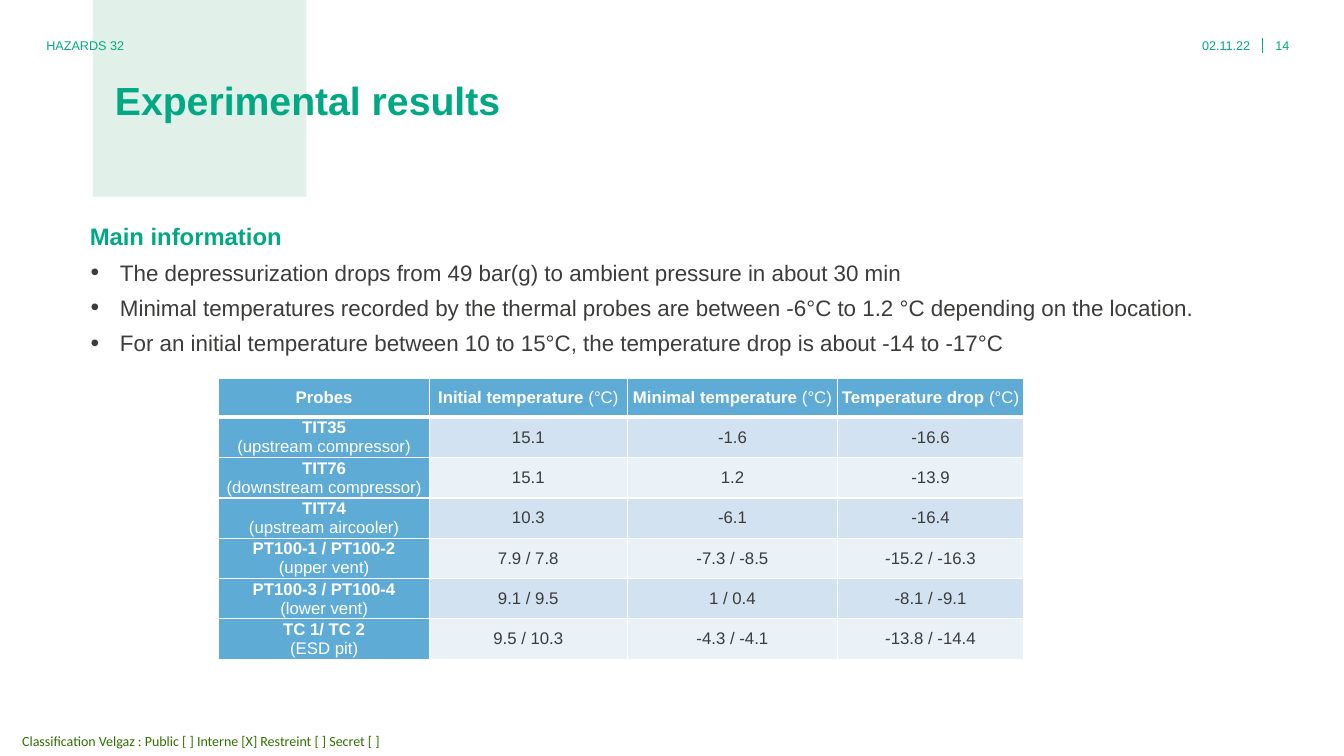
from lxml.etree import SubElement
from pptx import Presentation
from pptx.dml.color import RGBColor
from pptx.enum.shapes import MSO_CONNECTOR, MSO_SHAPE
from pptx.enum.text import MSO_ANCHOR, MSO_AUTO_SIZE, PP_ALIGN
from pptx.oxml.ns import qn
from pptx.util import Inches, Pt

GREEN = RGBColor(0x00, 0xA9, 0x83)
DARK_GREEN = RGBColor(0x31, 0x71, 0x00)
PALE_GREEN = RGBColor(0xE1, 0xF0, 0xE8)
TEXT = RGBColor(0x3C, 0x3C, 0x3B)
WHITE = RGBColor(0xFF, 0xFF, 0xFF)
BLUE = RGBColor(0x5E, 0xAB, 0xD6)
BANDS = [RGBColor(0xD2, 0xE2, 0xF0), RGBColor(0xEA, 0xF1, 0xF7)]

TITLE = "Experimental results"
HEADING = "Main information"
BULLETS = [
    "The depressurization drops from 49 bar(g) to ambient pressure in about 30 min",
    "Minimal temperatures recorded by the thermal probes are between -6°C to 1.2 °C "
    "depending on the location.",
    "For an initial temperature between 10 to 15°C, the temperature drop is about -14 to -17°C",
]
# text, (left, top, width, height), left inset, size, font, colour, alignment
LABELS = [
    ("Classification Velgaz : Public [ ] Interne [X] Restreint [ ] Secret [ ]",
     (0, 7.21, 4.03, 0.29), 0.22, 10, "Calibri", DARK_GREEN, PP_ALIGN.LEFT),
    ("02.11.22", (11.41, 0.33, 0.99, 0.24), 0, 9, "Arial", GREEN, PP_ALIGN.RIGHT),
    ("HAZARDS 32", (0.46, 0.33, 6.21, 0.24), 0, 9, "Arial", GREEN, PP_ALIGN.LEFT),
    ("14", (12.65, 0.33, 0.5, 0.24), 0, 9, "Arial", GREEN, PP_ALIGN.LEFT),
]
COLUMNS = [("Probes", 2.09), ("Initial temperature", 1.96),
           ("Minimal temperature", 2.09), ("Temperature drop", 1.84)]
UNIT = " (°C)"
PROBES = [
    ("TIT35", "(upstream compressor)", "15.1", "-1.6", "-16.6"),
    ("TIT76", "(downstream compressor)", "15.1", "1.2", "-13.9"),
    ("TIT74", "(upstream aircooler)", "10.3", "-6.1", "-16.4"),
    ("PT100-1 / PT100-2", "(upper vent)", "7.9 / 7.8", "-7.3 / -8.5", "-15.2 / -16.3"),
    ("PT100-3 / PT100-4", "(lower vent)", "9.1 / 9.5", "1 / 0.4", "-8.1 / -9.1"),
    ("TC 1/ TC 2", "(ESD pit)", "9.5 / 10.3", "-4.3 / -4.1", "-13.8 / -14.4"),
]
TABLE_LEFT, TABLE_TOP, HEADER_H, ROW_H = 2.17, 3.75, 0.39, 0.4


def style(font, size, color, bold=False, name="Arial"):
    font.name, font.size, font.bold = name, Pt(size), bold
    font.color.rgb = color


def set_frame(sp, box, anchor, left_inset=0):
    sp.left, sp.top, sp.width, sp.height = map(Inches, box)
    tf = sp.text_frame
    tf.word_wrap, tf.auto_size, tf.vertical_anchor = True, MSO_AUTO_SIZE.NONE, anchor
    tf.margin_left = Inches(left_inset)
    tf.margin_top = tf.margin_right = tf.margin_bottom = 0
    return tf


def set_bullet(p, char=None):
    """Give the paragraph a hanging bullet, or none at all."""
    pPr = p._p.get_or_add_pPr()
    pPr.set("marL", str(Inches(0.3) if char else 0))
    pPr.set("indent", str(Inches(-0.29) if char else 0))
    if char:
        SubElement(pPr, qn("a:buSzPct"), val="110000")
        SubElement(pPr, qn("a:buChar"), char=char)
    else:
        SubElement(pPr, qn("a:buNone"))


def set_cell(cell, fill, parts, top=1, bottom=1):
    """Fill, border and write a cell; parts are (text, bold, colour), "\\n" breaks the line."""
    tcPr = cell._tc.get_or_add_tcPr()
    for side, width in (("L", 1), ("R", 1), ("T", top), ("B", bottom)):
        ln = SubElement(tcPr, qn(f"a:ln{side}"), w=str(Pt(width)))
        solid = SubElement(ln, qn("a:solidFill"))
        SubElement(solid, qn("a:srgbClr"), val=str(WHITE))
    cell.fill.solid()
    cell.fill.fore_color.rgb = fill
    cell.vertical_anchor = MSO_ANCHOR.MIDDLE
    cell.margin_left = cell.margin_right = Inches(0.04)
    cell.margin_top = cell.margin_bottom = 0
    p = cell.text_frame.paragraphs[0]
    p.alignment = PP_ALIGN.CENTER
    for text, bold, color in parts:
        if text.startswith("\n"):
            p.add_line_break()
        r = p.add_run()
        r.text = text.lstrip("\n")
        style(r.font, 12, color, bold)


def add_backdrop(slide):
    sp = slide.shapes.add_shape(MSO_SHAPE.RECTANGLE, Inches(0.92), 0, Inches(2.12), Inches(1.95))
    sp.shadow.inherit = False
    sp.fill.solid()
    sp.fill.fore_color.rgb = PALE_GREEN
    sp.line.fill.background()
    slide.shapes._spTree.insert(2, sp._element)  # behind the title
    line = slide.shapes.add_connector(MSO_CONNECTOR.STRAIGHT, Inches(12.52), Inches(0.38),
                                      Inches(12.52), Inches(0.53))
    line.line.color.rgb, line.line.width = GREEN, Pt(0.5)
    SubElement(line._element.spPr, qn("a:effectLst"))


def add_text(slide):
    tf = set_frame(slide.shapes.title, (1.14, 0.59, 11.28, 0.63), MSO_ANCHOR.BOTTOM)
    tf.text = TITLE
    p = tf.paragraphs[0]
    p.alignment, p.line_spacing = PP_ALIGN.LEFT, Pt(31)
    style(p.runs[0].font, 28, GREEN, True)

    tf = set_frame(slide.placeholders[1], (0.89, 2.2, 11.5, 4.89), MSO_ANCHOR.TOP)
    tf.text = HEADING
    p = tf.paragraphs[0]
    set_bullet(p)
    p.space_before = Pt(0)
    style(p.runs[0].font, 17, GREEN, True)
    for text in BULLETS:
        p = tf.add_paragraph()
        p.text, p.level = text, 1
        set_bullet(p, "•")
        p.space_before = Pt(6)
        style(p.runs[0].font, 16, TEXT)

    for text, box, inset, size, name, color, align in LABELS:
        sp = slide.shapes.add_textbox(0, 0, 0, 0)
        tf = set_frame(sp, box, MSO_ANCHOR.MIDDLE, inset)
        tf.text = text
        p = tf.paragraphs[0]
        p.alignment = align
        style(p.runs[0].font, size, color, name=name)


def add_probe_table(slide):
    width = sum(w for _, w in COLUMNS)
    height = HEADER_H + ROW_H * len(PROBES)
    table = slide.shapes.add_table(len(PROBES) + 1, len(COLUMNS), Inches(TABLE_LEFT),
                                   Inches(TABLE_TOP), Inches(width), Inches(height)).table
    for i, row in enumerate(table.rows):
        row.height = Inches(ROW_H if i else HEADER_H)
    for col, (name, w) in enumerate(COLUMNS):
        table.columns[col].width = Inches(w)
        parts = [(name, True, WHITE)]
        if col:
            parts.append((UNIT, False, WHITE))
        set_cell(table.cell(0, col), BLUE, parts, bottom=3)
    for i, (probe, place, *values) in enumerate(PROBES):
        top = 1 if i else 3
        set_cell(table.cell(i + 1, 0), BLUE,
                 [(probe, True, WHITE), ("\n" + place, False, WHITE)], top)
        for col, value in enumerate(values, 1):
            set_cell(table.cell(i + 1, col), BANDS[i % 2], [(value, False, TEXT)], top)


def main():
    prs = Presentation()
    prs.slide_width, prs.slide_height = Inches(13.33), Inches(7.5)
    slide = prs.slides.add_slide(prs.slide_layouts[1])
    add_backdrop(slide)
    add_text(slide)
    add_probe_table(slide)
    prs.save("out.pptx")


if __name__ == "__main__":
    main()
